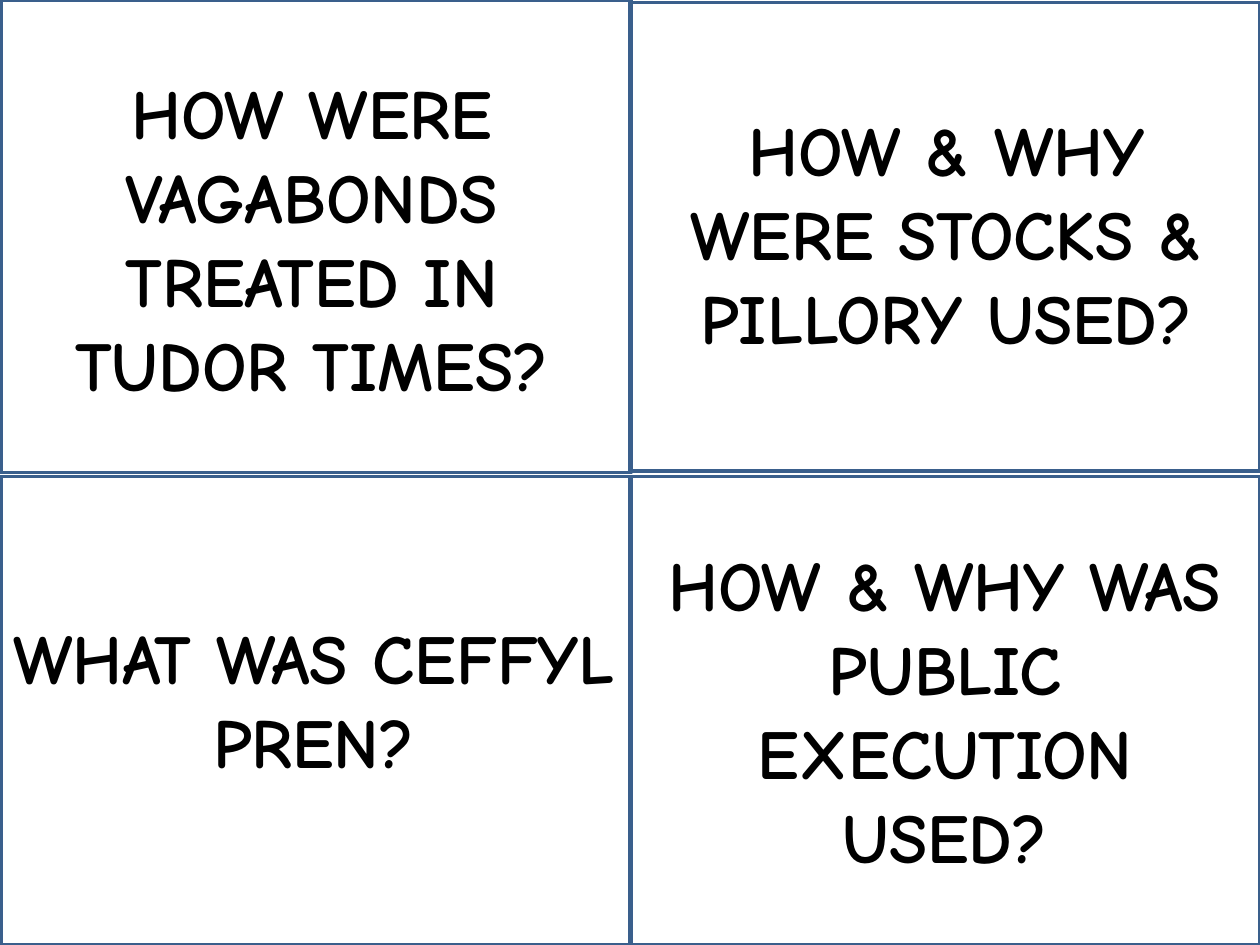
"""Four question cards about Tudor crime and punishment."""
from pptx import Presentation
from pptx.dml.color import RGBColor
from pptx.enum.shapes import MSO_SHAPE
from pptx.enum.text import MSO_AUTO_SIZE, PP_ALIGN
from pptx.util import Pt

COLORS = {"border": "3A5F8C", "text": "000000"}
FONT = "Comic Neue"
CARD_W = 360

FRAMES = [
    (360, 1.44, 267.84),
    (360, 272.16, 267.84),
    (0.72, 0, 270),
    (0.72, 272.16, 267.84),
]
QUESTIONS = [
    ("HOW & WHY WAS PUBLIC EXECUTION USED?", 361.44, 306, 357.12, 200.88),
    ("HOW WERE VAGABONDS TREATED IN TUDOR TIMES?", -1.44, 36, 359.28, 200.88),
    ("HOW & WHY WERE STOCKS & PILLORY USED?", 361.44, 57.6, 358.56, 152.64),
    ("WHAT WAS CEFFYL PREN?", 0, 347.76, 358.56, 104.4),
]


def add_frame(s, left, top, height):
    sp = s.shapes.add_shape(
        MSO_SHAPE.RECTANGLE, Pt(left), Pt(top), Pt(CARD_W), Pt(height))
    sp.shadow.inherit = False
    sp.fill.background()
    sp.line.color.rgb = RGBColor.from_string(COLORS["border"])
    sp.line.width = Pt(2)


def add_question(s, text, left, top, width, height):
    sp = s.shapes.add_textbox(Pt(left), Pt(top), Pt(width), Pt(height))
    tf = sp.text_frame
    tf.word_wrap = True
    tf.auto_size = MSO_AUTO_SIZE.SHAPE_TO_FIT_TEXT
    p = tf.paragraphs[0]
    p.text = text
    p.alignment = PP_ALIGN.CENTER
    p.font.name = FONT
    p.font.size = Pt(40)
    p.font.bold = True
    p.font.color.rgb = RGBColor.from_string(COLORS["text"])


def main():
    prs = Presentation()
    prs.slide_width, prs.slide_height = Pt(720), Pt(540)
    s = prs.slides.add_slide(prs.slide_layouts[6])
    for frame in FRAMES:
        add_frame(s, *frame)
    for question in QUESTIONS:
        add_question(s, *question)
    prs.save("out.pptx")


if __name__ == "__main__":
    main()
